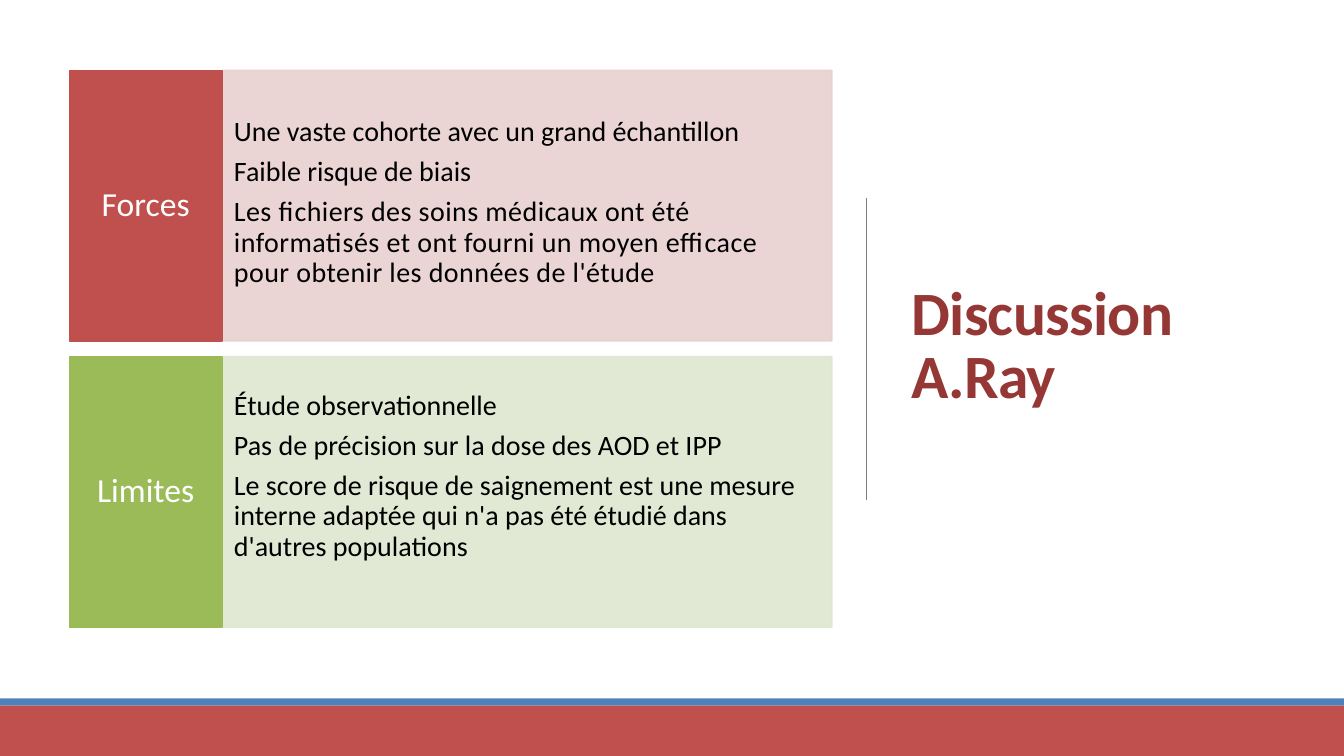
from lxml import etree
from pptx import Presentation
from pptx.dml.color import RGBColor
from pptx.enum.shapes import MSO_CONNECTOR, MSO_SHAPE
from pptx.enum.text import MSO_ANCHOR, MSO_AUTO_SIZE, PP_ALIGN
from pptx.oxml.ns import qn
from pptx.util import Inches, Pt

RECTANGLE = MSO_SHAPE.RECTANGLE
STRAIGHT = MSO_CONNECTOR.STRAIGHT
MIDDLE = MSO_ANCHOR.MIDDLE
NO_AUTOFIT = MSO_AUTO_SIZE.NONE
LEFT, CENTER = PP_ALIGN.LEFT, PP_ALIGN.CENTER

WHITE = RGBColor(0xFF, 0xFF, 0xFF)
BLACK = RGBColor(0, 0, 0)
GRAY = RGBColor(0x80, 0x80, 0x80)
BLUE = RGBColor(0x4F, 0x81, 0xBD)
RED = RGBColor(0xC0, 0x50, 0x4D)
DARK_RED = RGBColor(0x95, 0x37, 0x35)
GREEN = RGBColor(0x9B, 0xBB, 0x59)
PALE_RED = RGBColor(0xE8, 0xD0, 0xD0)
PALE_GREEN = RGBColor(0xDE, 0xE7, 0xD1)

FONT = "Calibri"
ROW_TOP, ROW_STEP, ROW_HEIGHT = 0.7, 2.84, 2.68
LABEL_LEFT, LABEL_WIDTH, PANEL_WIDTH = 0.69, 1.51, 6.05

ROWS = [
    ("Forces", RED, PALE_RED, 0.35, [
        ("Une vaste cohorte avec un grand échantillon", 0),
        ("Faible risque de biais", 0),
        ("Les fichiers des soins médicaux ont été informatisés et ont fourni "
         "un moyen efficace pour obtenir les données de l'étude", 0.3),
    ]),
    ("Limites", GREEN, PALE_GREEN, 0.6, [
        ("Étude observationnelle", 0),
        ("Pas de précision sur la dose des AOD et IPP", 0),
        ("Le score de risque de saignement est une mesure interne adaptée "
         "qui n'a pas été étudié dans d'autres populations", 0),
    ]),
]


def format_para(para, size, color, align=LEFT, spacing=0.9, after=0, bold=False, tracking=0):
    para.alignment = align
    para.line_spacing = spacing
    para.space_after = Pt(after)
    for span in para.runs:
        span.font.name = FONT
        span.font.size = Pt(size)
        span.font.bold = bold
        span.font.color.rgb = color
        if tracking:
            span._r.get_or_add_rPr().set("spc", str(round(tracking * 100)))


def add_box(page, left, top, width, height, color, outlined=False):
    box = page.shapes.add_shape(
        RECTANGLE, Inches(left), Inches(top), Inches(width), Inches(height))
    box.shadow.inherit = False
    box.fill.solid()
    box.fill.fore_color.rgb = color
    if outlined:
        box.line.color.rgb = color
        box.line.width = Pt(1.25)
    else:
        box.line.fill.background()
    return box


def set_opacity(box, percent):
    for color in box._element.spPr.iter(qn("a:srgbClr")):
        etree.SubElement(color, qn("a:alpha")).set("val", str(percent * 1000))


def set_frame(box, side, top, bottom):
    frame = box.text_frame
    frame.word_wrap = True
    frame.vertical_anchor = MIDDLE
    frame.margin_left = frame.margin_right = Inches(side)
    frame.margin_top, frame.margin_bottom = Inches(top), Inches(bottom)
    return frame


def add_row(page, top, label, color, pale, bottom_inset, points):
    panel = add_box(page, LABEL_LEFT + LABEL_WIDTH, top, PANEL_WIDTH, ROW_HEIGHT, pale, True)
    set_opacity(panel, 90)
    frame = set_frame(panel, 0.12, 0.3, bottom_inset)
    frame.text = "\n".join(text for text, _ in points)
    for para, (_, tracking) in zip(frame.paragraphs, points):
        format_para(para, 20, BLACK, after=7, tracking=tracking)

    tab = add_box(page, LABEL_LEFT, top, LABEL_WIDTH, ROW_HEIGHT, color, True)
    frame = set_frame(tab, 0.08, 0.26, 0.26)
    frame.text = label
    format_para(frame.paragraphs[0], 24, WHITE, CENTER)


def place_title(page, text):
    title = page.shapes.title
    title.left, title.top = Inches(8.94), Inches(0.69)
    title.width, title.height = Inches(3.69), Inches(5.53)
    frame = set_frame(title, 0.1, 0.05, 0.05)
    frame.auto_size = NO_AUTOFIT
    frame.text = text
    format_para(frame.paragraphs[0], 44, DARK_RED, spacing=0.85, bold=True, tracking=-0.5)


def add_divider(page, x, top, bottom):
    line = page.shapes.add_connector(
        STRAIGHT, Inches(x), Inches(top), Inches(x), Inches(bottom))
    line.line.color.rgb = GRAY
    line.line.width = Pt(0.5)
    etree.SubElement(line._element.spPr, qn("a:effectLst"))


def main():
    deck = Presentation()
    deck.slide_width, deck.slide_height = Inches(13.33), Inches(7.5)
    page = deck.slides.add_slide(deck.slide_layouts[5])
    place_title(page, "Discussion\vA.Ray")
    add_divider(page, 8.59, 1.96, 4.96)
    add_box(page, 0, 6.93, 13.33, 0.07, BLUE)
    add_box(page, 0, 7, 13.33, 0.5, RED)
    for index, row in enumerate(ROWS):
        add_row(page, ROW_TOP + index * ROW_STEP, *row)
    deck.save("out.pptx")


if __name__ == "__main__":
    main()
